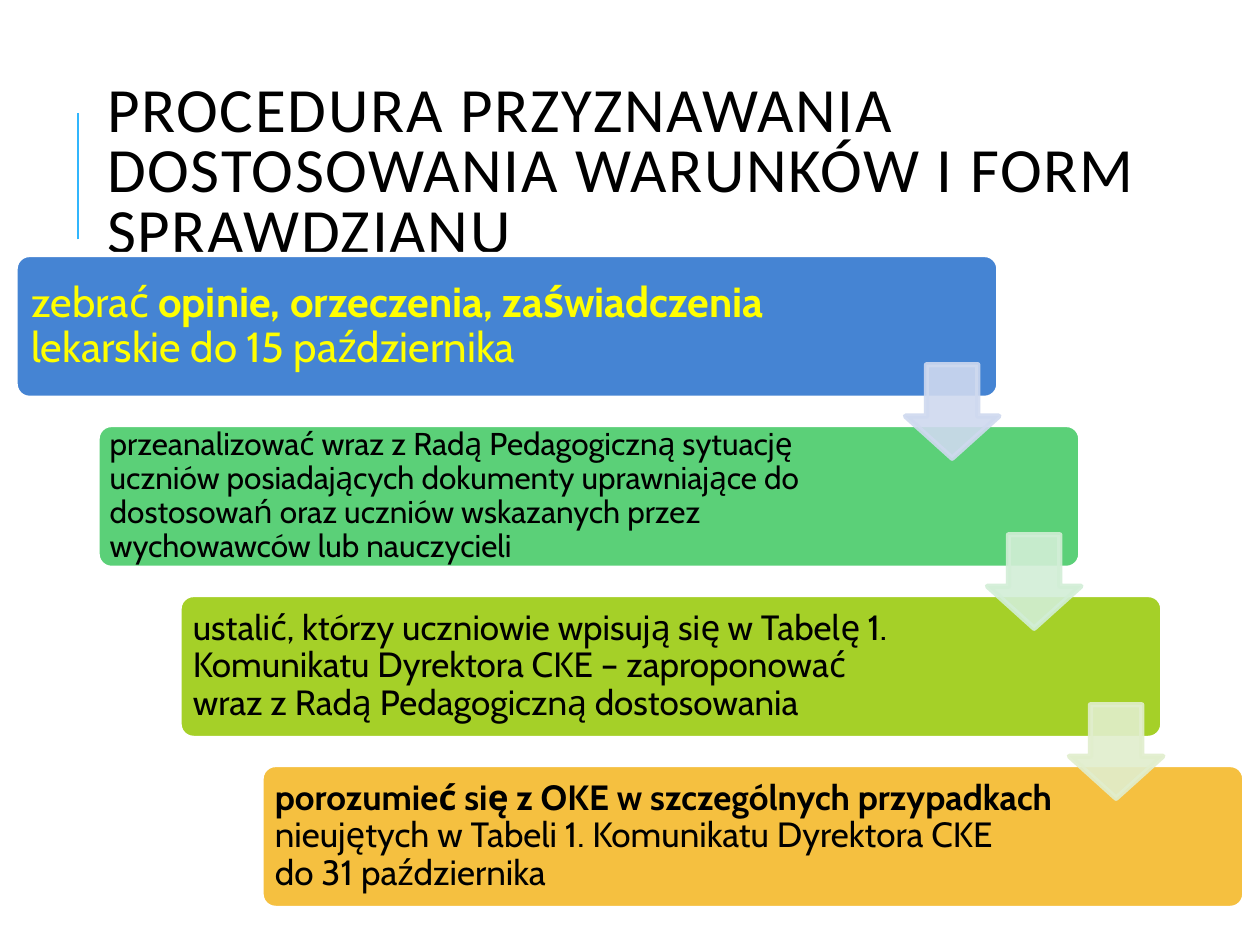
from dataclasses import dataclass

from lxml.etree import SubElement
from pptx import Presentation
from pptx.dml.color import RGBColor
from pptx.enum.shapes import MSO_CONNECTOR, MSO_SHAPE
from pptx.enum.text import MSO_ANCHOR, MSO_AUTO_SIZE, PP_ALIGN
from pptx.oxml.ns import qn
from pptx.util import Inches, Pt


@dataclass(frozen=True)
class Theme:
    title_font: str = "Calibri"
    body_font: str = "Cabin"
    title_size: int = 36
    title_color: str = "000000"
    accent: str = "31B6FD"
    outline: str = "FFFFFF"
    outline_width: int = 3
    arrow_opacity: int = 90


@dataclass(frozen=True)
class Step:
    fill: str
    color: str
    size: int
    inset: float
    text_width: float
    phrases: tuple
    arrow: str = ""


THEME = Theme()
WIDTH, HEIGHT = 10, 7.5
TITLE = "PROCEDURA PRZYZNAWANIA DOSTOSOWANIA WARUNKÓW I FORM SPRAWDZIANU"
STEPS = (
    Step("4584D3", "FFFF00", 24, 0.1, 6.48, (
        ("zebrać ", False),
        ("opinie, orzeczenia, zaświadczenia", True),
        (" lekarskie do 15 października", False)), "CFD9EF"),
    Step("5BD078", "000000", 18, 0.07, 6.35, (
        ("przeanalizować wraz z Radą Pedagogiczną sytuację uczniów "
         "posiadających dokumenty uprawniające do dostosowań oraz uczniów "
         "wskazanych przez wychowawców lub nauczycieli", False),), "D2EED6"),
    Step("A5D028", "000000", 20, 0.08, 6.36, (
        ("ustalić, którzy uczniowie wpisują się w Tabelę 1. Komunikatu "
         "Dyrektora CKE – zaproponować \nwraz z Radą Pedagogiczną "
         "dostosowania", False),), "E1EECD"),
    Step("F5C040", "000000", 20, 0.08, 6.35, (
        ("porozumieć się z OKE w szczególnych przypadkach", True),
        (" nieujętych w Tabeli 1. Komunikatu Dyrektora CKE\n"
         "do 31 października", False))),
)


def rgb(value):
    return RGBColor.from_string(value)


def lengths(*values):
    return [Inches(value) for value in values]


def set_frame(frame, inset_x, inset_y):
    frame.word_wrap = True
    frame.auto_size = MSO_AUTO_SIZE.NONE
    frame.vertical_anchor = MSO_ANCHOR.MIDDLE
    frame.margin_left = frame.margin_right = Inches(inset_x)
    frame.margin_top = frame.margin_bottom = Inches(inset_y)


def style_span(span, font, size, color, bold=False):
    span.font.name = font
    span.font.size = Pt(size)
    span.font.bold = bold
    span.font.color.rgb = rgb(color)


def style_shape(shape, fill, outline):
    shape.shadow.inherit = False
    shape.fill.solid()
    shape.fill.fore_color.rgb = rgb(fill)
    shape.line.color.rgb = rgb(outline)
    shape.line.width = Pt(THEME.outline_width)


def add_title(page, left, top, width, height):
    title = page.shapes.title
    title.left, title.top, title.width, title.height = lengths(left, top, width, height)
    frame = title.text_frame
    frame.text = TITLE
    set_frame(frame, 0.1, 0.05)
    para = frame.paragraphs[0]
    para.alignment = PP_ALIGN.LEFT
    para.line_spacing = 0.8
    para.space_before = Pt(0)
    span = para.runs[0]
    style_span(span, THEME.title_font, THEME.title_size, THEME.title_color)
    span.font._element.set("spc", "100")

    rule_left = left - 0.13
    rule = page.shapes.add_connector(
        MSO_CONNECTOR.STRAIGHT, *lengths(rule_left, 1.9, rule_left, 0.9))
    rule.line.color.rgb = rgb(THEME.accent)
    rule.line.width = Pt(1.5)
    SubElement(rule._element.spPr, qn("a:effectLst"))


def add_step(group, step, left, top, width, height):
    card = group.shapes.add_shape(
        MSO_SHAPE.ROUNDED_RECTANGLE, *lengths(left, top, width, height))
    card.adjustments[0] = 0.1
    style_shape(card, step.fill, THEME.outline)

    margin = 0.03
    box = group.shapes.add_textbox(
        *lengths(left + margin, top + margin, step.text_width, height - 2 * margin))
    set_frame(box.text_frame, step.inset, step.inset)
    para = box.text_frame.paragraphs[0]
    para.line_spacing = 0.9
    for text, bold in step.phrases:
        for index, line in enumerate(text.split("\n")):
            if index:
                para.add_line_break()
            span = para.add_run()
            span.text = line
            style_span(span, THEME.body_font, step.size, step.color, bold)


def add_arrow(group, color, left, top, side):
    arrow = group.shapes.add_shape(
        MSO_SHAPE.DOWN_ARROW, *lengths(left, top, side, side))
    arrow.adjustments[0] = 0.55
    arrow.adjustments[1] = 0.45
    style_shape(arrow, color, color)
    for tint in arrow._element.spPr.iter(qn("a:srgbClr")):
        SubElement(tint, qn("a:alpha"), val=str(THEME.arrow_opacity * 1000))


def add_staircase(page, left, top, width, height):
    card_width, card_height = width * 0.8, height * 0.22
    gaps = len(STEPS) - 1
    shift, drop = (width - card_width) / gaps, (height - card_height) / gaps
    side = card_height * 0.65
    corners = [(left + i * shift, top + i * drop) for i in range(len(STEPS))]
    group = page.shapes.add_group_shape()
    for step, (x, y) in zip(STEPS, corners):
        add_step(group, step, x, y, card_width, card_height)
    for step, (x, y) in zip(STEPS, corners):
        if step.arrow:
            center = y + (card_height + drop) / 2
            add_arrow(group, step.arrow, x + card_width - side, center - side / 2, side)


def main():
    deck = Presentation()
    deck.slide_width, deck.slide_height = lengths(WIDTH, HEIGHT)
    page = deck.slides.add_slide(deck.slide_layouts[5])
    add_title(page, 0.75, 0.84, 8.76, 1.09)
    add_staircase(page, 0.12, 2.02, 9.76, 5.19)
    deck.save("out.pptx")


if __name__ == "__main__":
    main()
